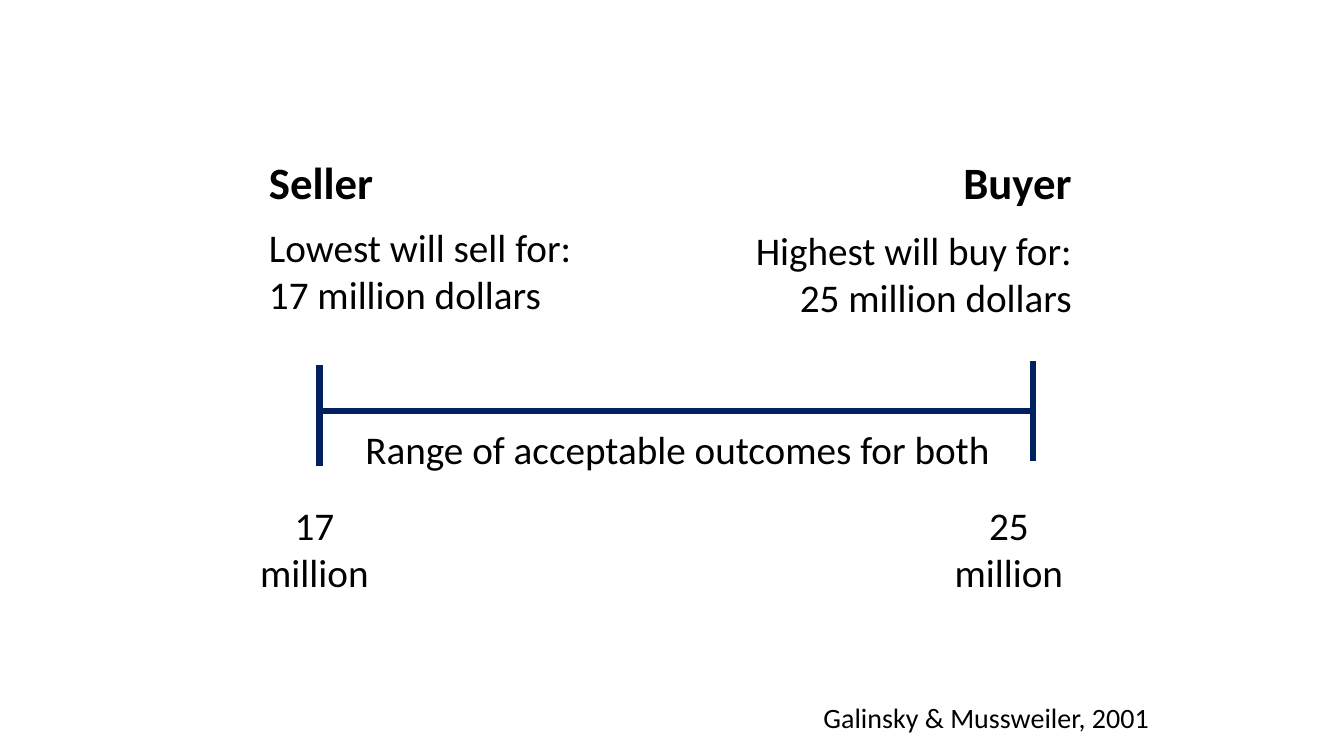
import pptx
import pptx.util
import pptx.dml.color
import pptx.enum.shapes
import pptx.enum.text
import pptx.oxml.ns
import lxml.etree

Cm, Pt = pptx.util.Cm, pptx.util.Pt
ALIGN = pptx.enum.text.PP_ALIGN
ANCHOR = pptx.enum.text.MSO_ANCHOR
BLACK = pptx.dml.color.RGBColor(0x00, 0x00, 0x00)
NAVY = pptx.dml.color.RGBColor(0x00, 0x20, 0x60)


def write(slide, box, lines, size=28, align=ALIGN.LEFT, bold=False, anchor=ANCHOR.TOP):
    """Put one paragraph per line in a box of (left, top, width, height) in cm."""
    frame = slide.shapes.add_textbox(*map(Cm, box)).text_frame
    frame.word_wrap = True
    frame.vertical_anchor = anchor
    frame.text = "\n".join(lines)
    for para in frame.paragraphs:
        para.alignment = align
        para.font.name = "Calibri"
        para.font.size = Pt(size)
        para.font.bold = bold
        para.font.color.rgb = BLACK
    return frame


def rule(slide, *ends):
    line = slide.shapes.add_connector(
        pptx.enum.shapes.MSO_CONNECTOR.STRAIGHT, *map(Cm, ends))
    line.line.color.rgb = NAVY
    line.line.width = Pt(4.5)
    props = line._element.spPr
    lxml.etree.SubElement(props, pptx.oxml.ns.qn("a:effectLst"))


def party(slide, box, name, terms, align):
    """Bold role name with its price limit below."""
    left, top, width, height = box
    head = write(slide, (left, top, width, 1.78), [name], 32, align, True, ANCHOR.BOTTOM)
    head.paragraphs[0].line_spacing = 0.9
    write(slide, (left, top + height - 2.64, width, 2.64), terms, align=align)


def scale(slide, box):
    """Range bar with an upright and a price at each end."""
    left, top, width, height = box
    right, mid, tick = left + width, top + 1.27, 2.54
    rule(slide, left, top + 0.1, left, top + 0.1 + tick)
    rule(slide, right, top, right, top + tick)
    rule(slide, right, mid, left, mid)
    for start, price in ((left - 2.13, "17 million"), (right - 2.62, "25 million")):
        write(slide, (start, top + height - 2.64, 4.01, 2.64), [price], align=ALIGN.CENTER)
    write(slide, (left + 0.64, top + 1.5, width - 1.23, 1.45),
          ["Range of acceptable outcomes for both"], align=ALIGN.CENTER)


def main():
    deck = pptx.Presentation()
    deck.slide_width, deck.slide_height = Cm(33.87), Cm(19.05)
    slide = deck.slides.add_slide(deck.slide_layouts[6])
    party(slide, (6.53, 3.61, 10.36, 4.54), "Seller",
          ["Lowest will sell for:", "17 million dollars"], ALIGN.LEFT)
    party(slide, (16.9, 3.61, 10.36, 4.6), "Buyer",
          ["Highest will buy for:", "25 million dollars"], ALIGN.RIGHT)
    scale(slide, (8.05, 9.09, 17.99, 6.05))
    write(slide, (10.16, 17.53, 19.05, 1.12), ["Galinsky & Mussweiler, 2001"],
          20, ALIGN.RIGHT)
    deck.save("out.pptx")


if __name__ == "__main__":
    main()
